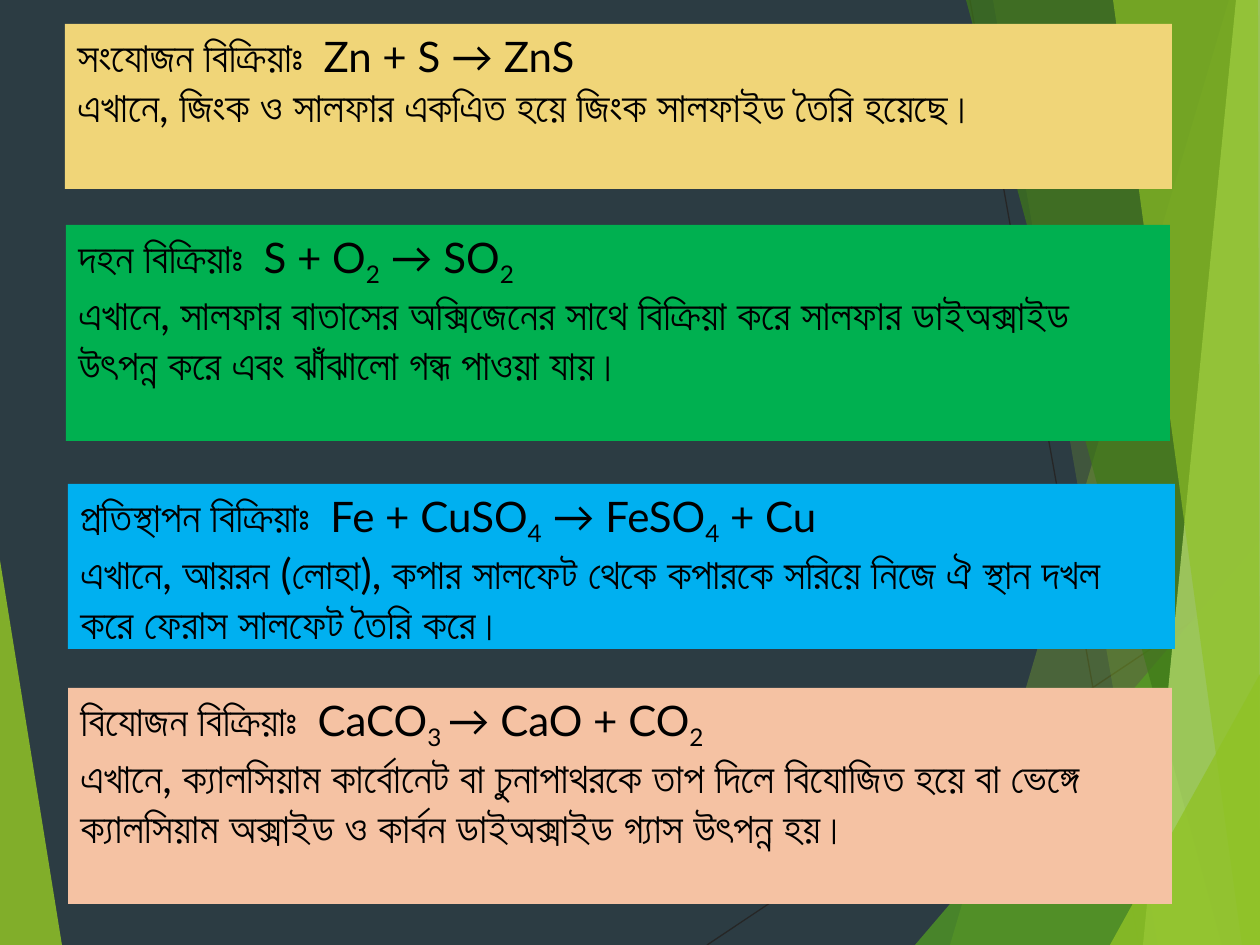
import pptx
import pptx.dml.color
import pptx.enum.shapes
import pptx.enum.text
import pptx.oxml.ns
import pptx.util
from lxml import etree

PX = 914400 / 126
WIDTH, HEIGHT = 1260, 945
FONT = "Lato"
COLORS = {
    "background": "2C3C43", "line": "262626", "text": "000000",
    "lime": "90C226", "green": "54A021", "dark": "3F7819", "pale": "C0E474",
    "combination": "F0D578", "combustion": "00B050",
    "displacement": "00B0F0", "decomposition": "F5C2A3",
}

LINES = [((707, 945), (1260, 576)), ((970, 0), (1139, 945))]

# Each facet: colour, opacity in percent, corner points
FACETS = [
    ("lime", 85, [(0, 560), (62, 945), (0, 945)]),
    ("lime", 30, [(1229, 0), (950, 945), (1260, 945), (1260, 0)]),
    ("lime", 20, [(993, 0), (1158, 945), (1260, 945), (1260, 0)]),
    ("green", 72, [(915, 945), (1260, 541), (1260, 945)]),
    ("dark", 70, [(966, 0), (1222, 945), (1260, 945), (1260, 0)]),
    ("pale", 70, [(1236, 0), (1143, 945), (1260, 945), (1260, 0)]),
    ("lime", 65, [(1113, 0), (1242, 945), (1260, 945), (1258, 0)]),
    ("lime", 80, [(1110, 945), (1260, 674), (1260, 945)]),
]

# Each reaction: colour, box, name, formula with _subscripts_, explanation
REACTIONS = [
    ("combination", (65, 24, 1107, 165), "সংযোজন বিক্রিয়াঃ  ", "Zn + S → ZnS",
     "এখানে, জিংক ও সালফার একএিত হয়ে জিংক সালফাইড তৈরি হয়েছে।"),
    ("combustion", (66, 225, 1104, 216), "দহন বিক্রিয়াঃ  ", "S + O_2_ → SO_2_",
     "এখানে, সালফার বাতাসের অক্সিজেনের সাথে বিক্রিয়া করে সালফার ডাইঅক্সাইড "
     "উৎপন্ন করে এবং ঝাঁঝালো গন্ধ পাওয়া যায়।"),
    ("displacement", (68, 484, 1107, 165), "প্রতিস্থাপন বিক্রিয়াঃ  ",
     "Fe + CuSO_4_ → FeSO_4_ + Cu",
     "এখানে, আয়রন (লোহা), কপার সালফেট থেকে কপারকে সরিয়ে নিজে ঐ স্থান দখল করে "
     "ফেরাস সালফেট তৈরি করে।"),
    ("decomposition", (68, 688, 1104, 216), "বিযোজন বিক্রিয়াঃ  ",
     "CaCO_3 _→ CaO + CO_2_",
     "এখানে, ক্যালসিয়াম কার্বোনেট বা চুনাপাথরকে তাপ দিলে বিযোজিত হয়ে বা ভেঙ্গে "
     "ক্যালসিয়াম অক্সাইড ও কার্বন ডাইঅক্সাইড গ্যাস উৎপন্ন হয়।"),
]


def px(length):
    return pptx.util.Emu(round(length * PX))


def rgb(name):
    return pptx.dml.color.RGBColor.from_string(COLORS[name])


def add_child(parent, tag, **attributes):
    return etree.SubElement(parent, pptx.oxml.ns.qn(tag), attributes)


def paint(shape, color):
    shape.shadow.inherit = False
    shape.fill.solid()
    shape.fill.fore_color.rgb = rgb(color)
    shape.line.fill.background()


def add_line(slide, start, end):
    line = slide.shapes.add_connector(
        pptx.enum.shapes.MSO_CONNECTOR.STRAIGHT, *map(px, start + end))
    line.line.color.rgb = rgb("line")
    line.line.width = pptx.util.Pt(0.75)
    add_child(line._element.spPr, "a:effectLst")


def add_facet(slide, color, opacity, points):
    builder = slide.shapes.build_freeform(*points[0], scale=PX)
    builder.add_line_segments(points[1:], close=True)
    facet = builder.convert_to_shape()
    paint(facet, color)
    fill_color = facet._element.spPr.find(".//" + pptx.oxml.ns.qn("a:srgbClr"))
    add_child(fill_color, "a:alpha", val=str(opacity * 1000))


def add_run(paragraph, text, bold=False, subscript=False):
    run = paragraph.add_run()
    run.text = text
    font = run.font
    font.name = FONT
    font.size = pptx.util.Pt(24)
    font.bold = bold
    font.color.rgb = rgb("text")
    properties = run._r.get_or_add_rPr()
    add_child(properties, "a:cs", typeface=FONT)
    if subscript:
        properties.set("baseline", "-25000")


def add_formula(paragraph, formula):
    """Add runs, where every second part between underscores is a subscript."""
    for index, part in enumerate(formula.split("_")):
        if part:
            add_run(paragraph, part, subscript=index % 2 == 1)


def add_reaction(slide, color, box, name, formula, explanation):
    shape = slide.shapes.add_shape(
        pptx.enum.shapes.MSO_SHAPE.RECTANGLE, *map(px, box))
    paint(shape, color)
    frame = shape.text_frame
    frame.word_wrap = True
    frame.vertical_anchor = pptx.enum.text.MSO_ANCHOR.TOP
    heading, body = frame.paragraphs[0], frame.add_paragraph()
    for paragraph in (heading, body):
        paragraph.alignment = pptx.enum.text.PP_ALIGN.LEFT
    add_run(heading, name, bold=True)
    add_formula(heading, formula)
    add_run(body, explanation)


def main():
    presentation = pptx.Presentation()
    presentation.slide_width = px(WIDTH)
    presentation.slide_height = px(HEIGHT)
    slide = presentation.slides.add_slide(presentation.slide_layouts[6])
    slide.background.fill.solid()
    slide.background.fill.fore_color.rgb = rgb("background")
    for line in LINES:
        add_line(slide, *line)
    for facet in FACETS:
        add_facet(slide, *facet)
    for reaction in REACTIONS:
        add_reaction(slide, *reaction)
    presentation.save("out.pptx")


if __name__ == "__main__":
    main()
